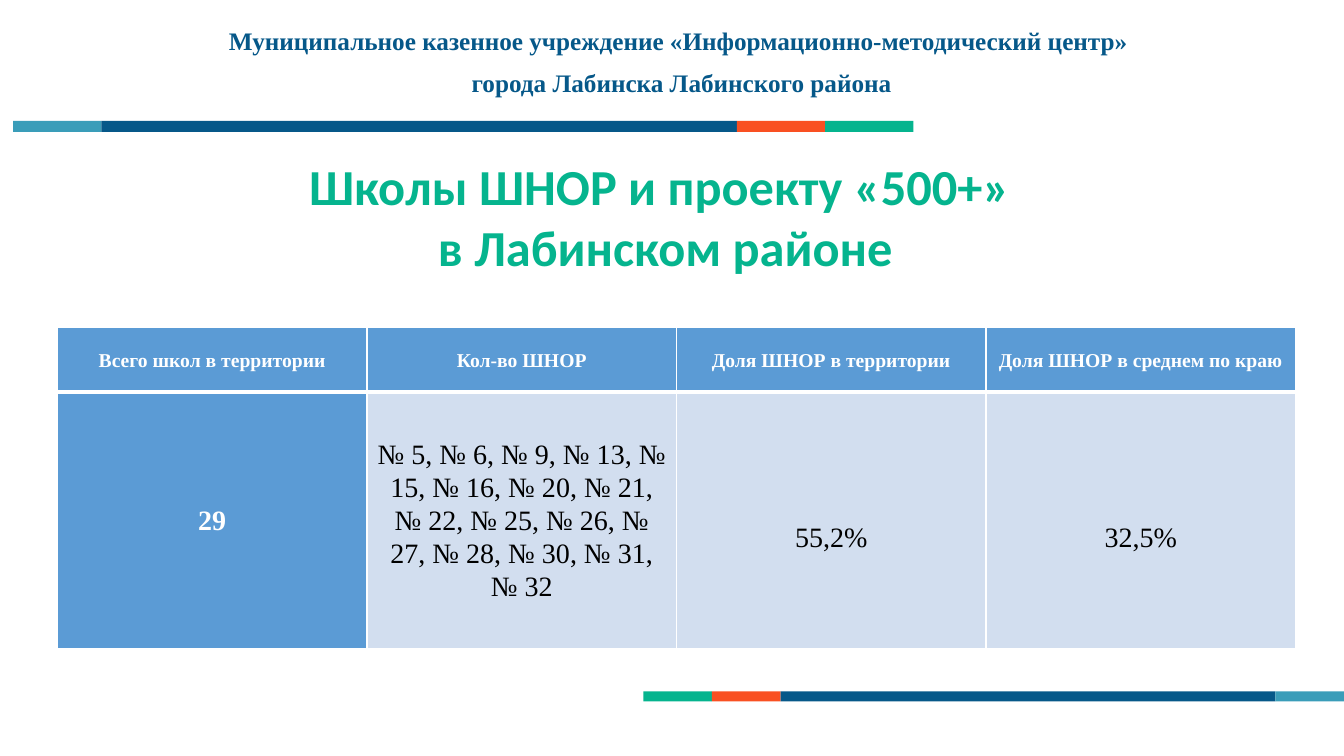
from lxml.etree import SubElement
from pptx import Presentation
from pptx.dml.color import RGBColor
from pptx.enum.shapes import MSO_SHAPE as Shape
from pptx.enum.text import MSO_ANCHOR as Anchor, PP_ALIGN as Align
from pptx.oxml.ns import qn
from pptx.util import Inches, Pt

COLORS = {"navy": "065889", "sky": "3A9DB9", "orange": "F95022", "green": "05B48E",
          "blue": "5B9BD5", "pale": "D2DEEF", "white": "FFFFFF", "black": "000000"}
SERIF = "Times New Roman"
STRIPES = [("sky", 1), ("navy", 7.2), ("orange", 1), ("green", 1)]
HEADINGS = ["Всего школ в территории", "Кол-во ШНОР",
            "Доля ШНОР в территории", "Доля ШНОР в среднем по краю"]
VALUES = [["29"],
          ["№ 5, № 6, № 9, № 13, № 15, № 16, № 20, № 21, № 22, № 25, № 26, "
           "№ 27, № 28, № 30, № 31,", "№ 32"],
          ["55,2%"], ["32,5%"]]
LOWERED = Inches(0.34)


def color(name):
    return RGBColor.from_string(COLORS[name])


def write(frame, lines, font, **layout):
    frame.word_wrap = True
    for index, line in enumerate(lines):
        para = frame.paragraphs[0] if index == 0 else frame.add_paragraph()
        para.text = line
        for name, value in {"alignment": Align.CENTER, **layout}.items():
            setattr(para, name, value)
        for span in para.runs:
            span.font.color.rgb = color(font["color"])
            for name in ("name", "size", "bold"):
                setattr(span.font, name, font[name])


def add_text(page, box, lines, font, anchor, **layout):
    frame = page.shapes.add_textbox(*map(Inches, box)).text_frame
    frame.vertical_anchor = anchor
    write(frame, lines, font, **layout)


def add_stripes(page, box, stripes):
    left, top, width, height = box
    unit = width / sum(share for _, share in stripes)
    for name, share in stripes:
        bar = page.shapes.add_shape(
            Shape.RECTANGLE, *map(Inches, (left, top, unit * share, height)))
        bar.shadow.inherit = False
        bar.fill.solid()
        bar.fill.fore_color.rgb = color(name)
        bar.line.fill.background()
        left += unit * share


def add_borders(cell, widths):
    props = cell._tc.get_or_add_tcPr()
    for index, (side, width) in enumerate(widths.items()):
        line = props.makeelement(qn(f"a:{side}"), {"w": str(Pt(width))})
        fill = SubElement(line, qn("a:solidFill"))
        SubElement(fill, qn("a:srgbClr"), val=COLORS["white"])
        props.insert(index, line)


def style_cell(cell, lines, fill, font, top_margin, rule_top, rule_bottom):
    margins = {"margin_left": Inches(0.07), "margin_right": Inches(0.07),
               "margin_top": top_margin, "margin_bottom": 0,
               "vertical_anchor": Anchor.MIDDLE}
    for name, value in margins.items():
        setattr(cell, name, value)
    cell.fill.solid()
    cell.fill.fore_color.rgb = color(fill)
    write(cell.text_frame, lines, font, line_spacing=1.07)
    add_borders(cell, {"lnL": 1, "lnR": 1, "lnT": rule_top, "lnB": rule_bottom})


def add_school_table(page, box):
    table = page.shapes.add_table(2, len(HEADINGS), *map(Inches, box)).table
    for row, share in zip(table.rows, (0.2, 0.8)):
        row.height = Inches(box[3] * share)
    for index, (heading, lines) in enumerate(zip(HEADINGS, VALUES)):
        first = index == 0
        head_font = {"name": SERIF, "size": Pt(14), "bold": True, "color": "white"}
        body_font = {"name": SERIF, "size": Pt(20), "bold": first,
                     "color": "white" if first else "black"}
        style_cell(table.cell(0, index), [heading], "blue", head_font, 0, 1, 3)
        style_cell(table.cell(1, index), lines, "blue" if first else "pale",
                   body_font, LOWERED if index > 1 else 0, 3, 1)


def build_page(deck):
    page = deck.slides.add_slide(deck.slide_layouts[6])
    add_text(page, (1, 0.24, 11.52, 0.84),
             ["Муниципальное казенное учреждение «Информационно-методический центр» ",
              "города Лабинска Лабинского района"],
             {"name": SERIF, "size": Pt(18), "bold": True, "color": "navy"},
             Anchor.TOP, line_spacing=0.9, space_before=Pt(10))
    add_stripes(page, (0.13, 1.2, 8.93, 0.11), STRIPES)
    add_stripes(page, (6.38, 6.86, 6.95, 0.1), STRIPES[::-1])
    add_text(page, (0.68, 1.43, 11.84, 1.36),
             ["Школы ШНОР и проекту «500+» \vв Лабинском районе"],
             {"name": "Calibri", "size": Pt(36), "bold": True, "color": "green"},
             Anchor.BOTTOM, space_after=Pt(6))
    add_school_table(page, (0.57, 3.25, 12.28, 3.18))


def main():
    deck = Presentation()
    deck.slide_width, deck.slide_height = Inches(13.33), Inches(7.5)
    build_page(deck)
    deck.save("out.pptx")


if __name__ == "__main__":
    main()
